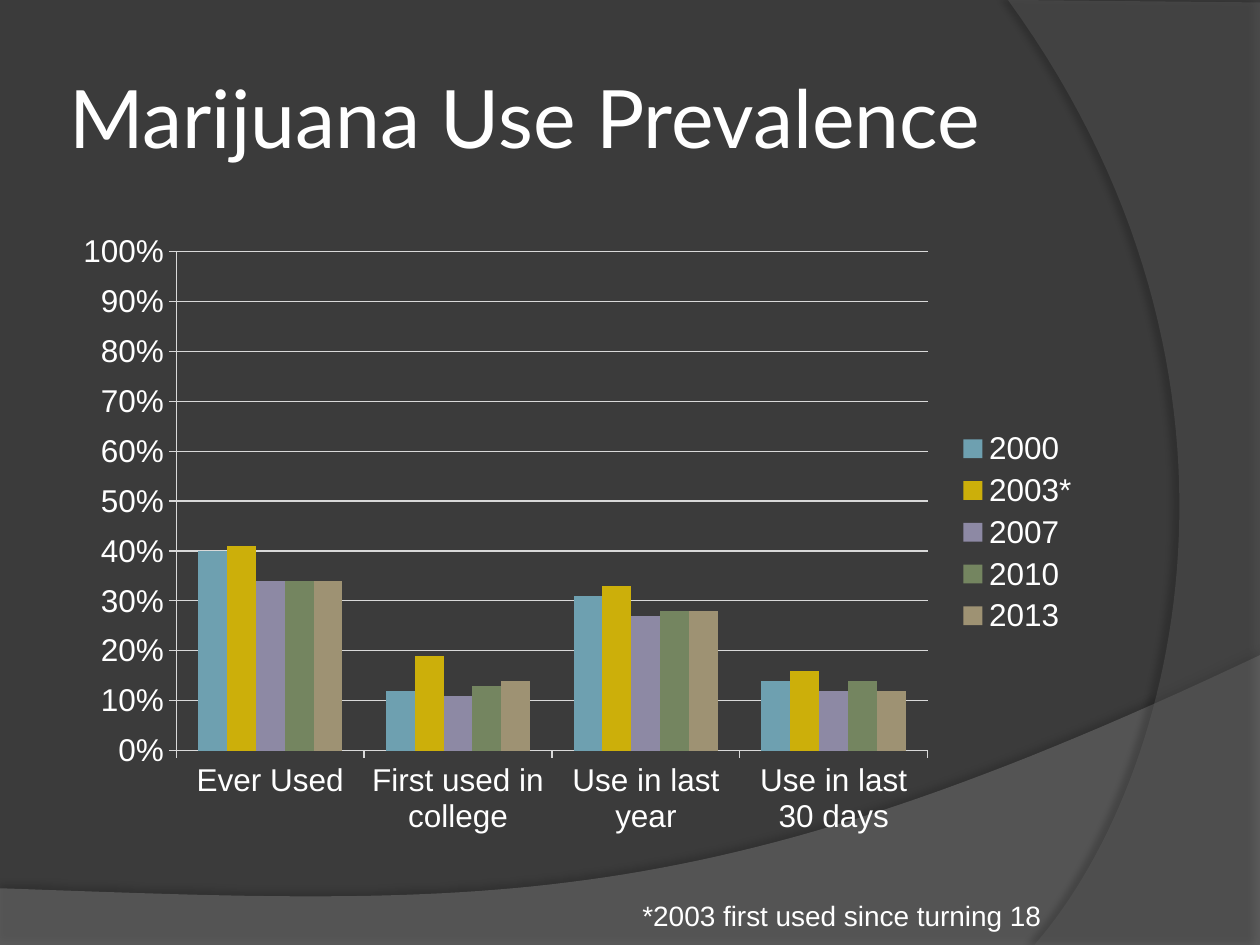
import lxml.etree
import pptx
import pptx.chart.data
import pptx.dml.color
import pptx.enum.chart
import pptx.enum.text
import pptx.oxml.ns
import pptx.oxml.xmlchemy
import pptx.util

Pt = pptx.util.Pt
qn = pptx.oxml.ns.qn

COLORS = {
    "background": "3B3B3B", "text": "FFFFFF", "rule": "D9D9D9",
    "wave": "7F7F7F", "arc": "5E5E5E", "shadow": "000000",
    "2000": "6EA0B0", "2003*": "CCAF0A", "2007": "8D89A4",
    "2010": "748560", "2013": "9E9273",
}
TITLE = ("Marijuana Use Prevalence", (36, 21.6, 588.24, 90), "Lato", 46)
FOOTNOTE = ("*2003 first used since turning 18", (360, 509.76, 249.84, 26.64), "Arial", 16)
CATEGORIES = ["Ever Used", "First used in college", "Use in last year", "Use in last 30 days"]
PREVALENCE = {
    "2000": (0.40, 0.12, 0.31, 0.14),
    "2003*": (0.41, 0.19, 0.33, 0.16),
    "2007": (0.34, 0.11, 0.27, 0.12),
    "2010": (0.34, 0.13, 0.28, 0.14),
    "2013": (0.34, 0.14, 0.28, 0.12),
}
CHART_BOX = (36, 126, 588.24, 356.4)
PLOT_LAYOUT = {"x": 0.11, "y": 0.05, "w": 0.73, "h": 0.8}
SWEEPS = [
    {"color": "wave", "alpha": 45, "corners": [(0, 507.6), (0, 540), (720, 540)],
     "curve": [(720, 374.4), (402.5, 524.9), (281.5, 517.7), (0, 507.6)],
     "shadow": {"alpha": 35, "blur": 4, "distance": 3.5, "angle": 270}},
    {"color": "arc", "alpha": 40, "corners": [(720, 1.44), (720, 540)],
     "curve": [(591.1, 540), (673.2, 445.7), (733, 216), (576, 0)],
     "shadow": {"alpha": 45, "blur": 4, "distance": 4, "angle": 180}},
]
CURVE_STEPS = 60


def rgb(name):
    return pptx.dml.color.RGBColor.from_string(COLORS[name])


def add_alpha(color, percent):
    lxml.etree.SubElement(color, qn("a:alpha"), val=str(percent * 1000))


def bezier_points(start, control1, control2, end):
    for step in range(CURVE_STEPS + 1):
        t = step / CURVE_STEPS
        weights = ((1 - t) ** 3, 3 * t * (1 - t) ** 2, 3 * t * t * (1 - t), t ** 3)
        yield tuple(
            sum(w * point[axis] for w, point in zip(weights, (start, control1, control2, end)))
            for axis in (0, 1)
        )


def add_sweep(slide, sweep):
    outline = [
        (Pt(x), Pt(y)) for x, y in sweep["corners"] + list(bezier_points(*sweep["curve"]))
    ]
    builder = slide.shapes.build_freeform(*outline[0])
    builder.add_line_segments(outline[1:], close=True)
    shape = builder.convert_to_shape()
    shape.shadow.inherit = False
    shape.line.fill.background()
    shape.fill.solid()
    shape.fill.fore_color.rgb = rgb(sweep["color"])
    properties = shape.element.spPr
    add_alpha(properties.find(qn("a:solidFill")).find(qn("a:srgbClr")), sweep["alpha"])
    shadow = sweep["shadow"]
    outer = lxml.etree.SubElement(
        properties.find(qn("a:effectLst")), qn("a:outerShdw"),
        blurRad=str(Pt(shadow["blur"])), dist=str(Pt(shadow["distance"])),
        dir=str(shadow["angle"] * 60000), rotWithShape="0",
    )
    add_alpha(lxml.etree.SubElement(outer, qn("a:srgbClr"), val=COLORS["shadow"]), shadow["alpha"])


def add_text(slide, wording, box, font_name, size):
    frame = slide.shapes.add_textbox(*map(Pt, box)).text_frame
    run = frame.paragraphs[0].add_run()
    run.text = wording
    run.font.name = font_name
    run.font.size = Pt(size)
    run.font.color.rgb = rgb("text")
    return frame


def style_rule(line):
    line.color.rgb = rgb("rule")
    line.width = Pt(0.75)


def add_prevalence_chart(slide):
    data = pptx.chart.data.CategoryChartData(number_format="0%")
    data.categories = CATEGORIES
    for year, shares in PREVALENCE.items():
        data.add_series(year, shares)
    chart = slide.shapes.add_chart(
        pptx.enum.chart.XL_CHART_TYPE.COLUMN_CLUSTERED, *map(Pt, CHART_BOX), data
    ).chart
    chart.has_title = False
    chart.font.name = "Arial"
    chart.font.size = Pt(18)
    chart.font.color.rgb = rgb("text")

    chart.has_legend = True
    chart.legend.position = pptx.enum.chart.XL_LEGEND_POSITION.RIGHT
    chart.legend.include_in_layout = False

    plot = chart.plots[0]
    plot.gap_width = 150
    plot.overlap = 0
    plot.vary_by_categories = False
    for series in plot.series:
        series.invert_if_negative = False
        series.format.fill.solid()
        series.format.fill.fore_color.rgb = rgb(series.name)

    shares_axis = chart.value_axis
    shares_axis.minimum_scale, shares_axis.maximum_scale = 0, 1
    shares_axis.major_unit = 0.1
    shares_axis.has_major_gridlines = True
    shares_axis.tick_labels.number_format = "0%"
    shares_axis.tick_labels.number_format_is_linked = False
    style_rule(shares_axis.major_gridlines.format.line)
    for axis in (chart.category_axis, shares_axis):
        axis.major_tick_mark = pptx.enum.chart.XL_TICK_MARK.OUTSIDE
        style_rule(axis.format.line)

    plot_area = chart.element.find(qn("c:chart")).find(qn("c:plotArea"))
    layout = plot_area.find(qn("c:layout"))
    if layout is None:
        layout = pptx.oxml.xmlchemy.OxmlElement("c:layout")
        plot_area.insert(0, layout)
    manual = lxml.etree.SubElement(layout, qn("c:manualLayout"))
    settings = {"layoutTarget": "inner", "xMode": "edge", "yMode": "edge", **PLOT_LAYOUT}
    for tag, value in settings.items():
        lxml.etree.SubElement(manual, qn("c:" + tag), val=str(value))


def main():
    deck = pptx.Presentation()
    deck.slide_width, deck.slide_height = Pt(720), Pt(540)
    slide = deck.slides.add_slide(deck.slide_layouts[6])
    slide.background.fill.solid()
    slide.background.fill.fore_color.rgb = rgb("background")

    for sweep in SWEEPS:
        add_sweep(slide, sweep)

    title = add_text(slide, *TITLE)
    title.word_wrap = True
    title.vertical_anchor = pptx.enum.text.MSO_ANCHOR.MIDDLE
    title.margin_left = title.margin_right = Pt(3.6)

    add_prevalence_chart(slide)

    footnote = add_text(slide, *FOOTNOTE)
    footnote.word_wrap = False
    footnote.auto_size = pptx.enum.text.MSO_AUTO_SIZE.SHAPE_TO_FIT_TEXT

    deck.save("out.pptx")


if __name__ == "__main__":
    main()
